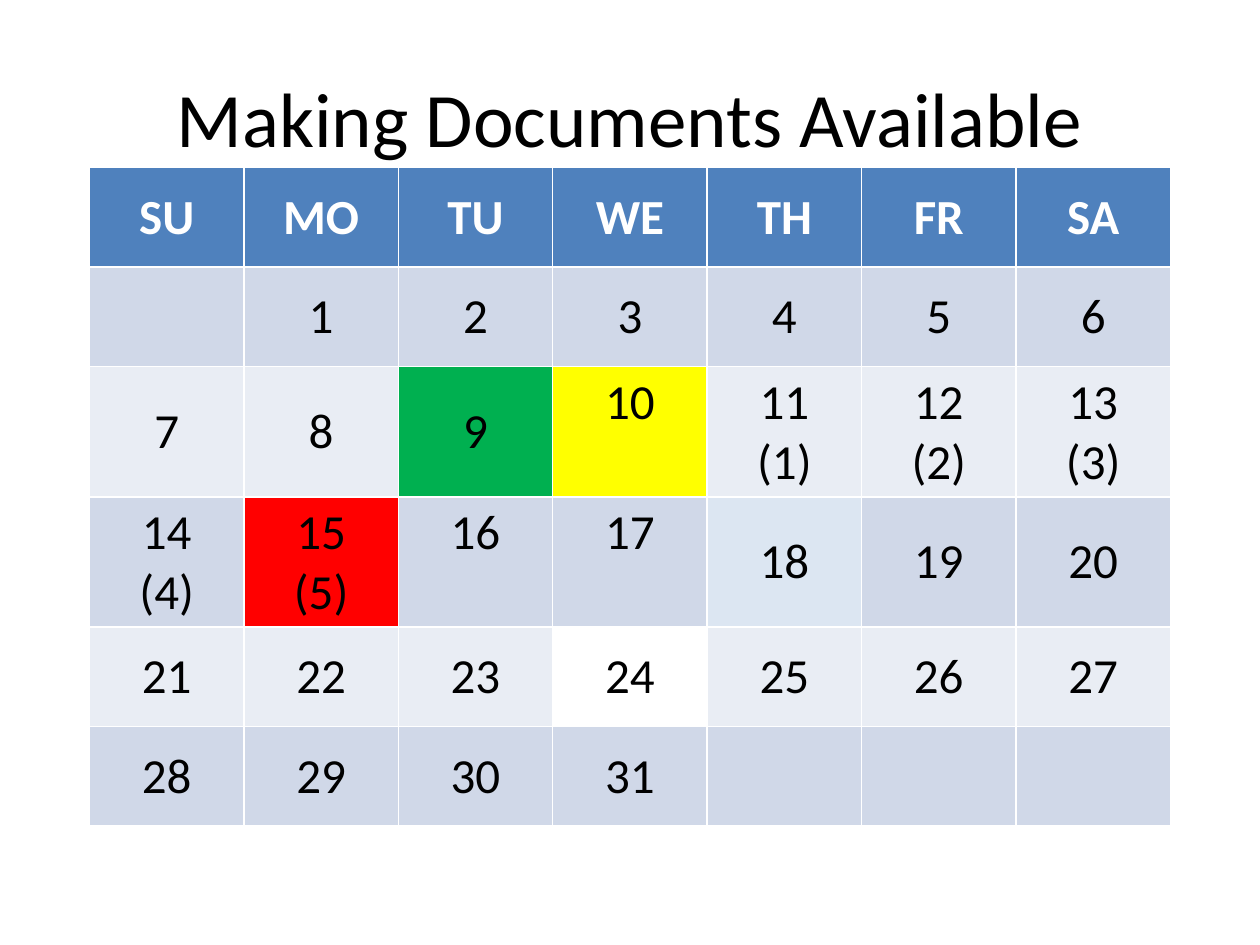
from pptx import Presentation
from pptx.dml.color import RGBColor
from pptx.enum.text import MSO_ANCHOR, PP_ALIGN
from pptx.util import Inches, Pt

FONT = "Calibri"
BLACK = RGBColor(0x00, 0x00, 0x00)
WHITE = RGBColor(0xFF, 0xFF, 0xFF)
HEADER = RGBColor(0x4F, 0x81, 0xBD)
BANDS = [RGBColor(0xE9, 0xED, 0xF4), RGBColor(0xD0, 0xD8, 0xE8)]
GREEN = RGBColor(0x00, 0xB0, 0x50)
YELLOW = RGBColor(0xFF, 0xFF, 0x00)
RED = RGBColor(0xFF, 0x00, 0x00)
PALE_BLUE = RGBColor(0xDC, 0xE6, 0xF2)

WEEKDAYS = ["SU", "MO", "TU", "WE", "TH", "FR", "SA"]
WEEKS = 5
FIRST_COLUMN = 1
LAST_DAY = 31
DAY_FILLS = {9: GREEN, 10: YELLOW, 15: RED, 18: PALE_BLUE, 24: None}
COUNTED_DAYS = {day: f"({day - 10})" for day in range(11, 16)}
TOP_DAYS = {10, 16, 17}


def add_text(tf, lines, size, color, bold=False):
    """Write one centred paragraph per line."""
    for i, line in enumerate(lines):
        p = tf.paragraphs[0] if i == 0 else tf.add_paragraph()
        p.alignment = PP_ALIGN.CENTER
        r = p.add_run()
        r.text = line
        r.font.name = FONT
        r.font.size = Pt(size)
        r.font.bold = bold
        r.font.color.rgb = color


def add_title(s, text):
    tf = s.shapes.add_textbox(Inches(0.5), Inches(0.3), Inches(9), Inches(1.25)).text_frame
    tf.word_wrap = True
    tf.vertical_anchor = MSO_ANCHOR.MIDDLE
    add_text(tf, [text], 44, BLACK)


def fill_cell(cell, lines, fill, color=BLACK, bold=False, anchor=MSO_ANCHOR.MIDDLE):
    if fill is None:
        cell.fill.background()
    else:
        cell.fill.solid()
        cell.fill.fore_color.rgb = fill
    cell.vertical_anchor = anchor
    add_text(cell.text_frame, lines, 28, color, bold)


def add_calendar(s):
    columns = len(WEEKDAYS)
    frame = s.shapes.add_table(WEEKS + 1, columns, Inches(0.71), Inches(1.33),
                               Inches(8.58), Inches(5.21))
    table = frame.table
    for row in table.rows:
        row.height = Inches(0.79)
    frame.height = Inches(5.21)

    for col, name in enumerate(WEEKDAYS):
        fill_cell(table.cell(0, col), [name], HEADER, WHITE, bold=True)

    for slot in range(WEEKS * columns):
        week, col = divmod(slot, columns)
        row = week + 1
        day = slot - FIRST_COLUMN + 1
        lines = [str(day)] if 1 <= day <= LAST_DAY else []
        if day in COUNTED_DAYS:
            lines.append(COUNTED_DAYS[day])
        anchor = MSO_ANCHOR.TOP if day in TOP_DAYS else MSO_ANCHOR.MIDDLE
        fill = DAY_FILLS.get(day, BANDS[row % 2])
        fill_cell(table.cell(row, col), lines, fill, anchor=anchor)


def main():
    prs = Presentation()
    prs.slide_width = Inches(10)
    prs.slide_height = Inches(7.5)
    s = prs.slides.add_slide(prs.slide_layouts[6])
    add_title(s, "Making Documents Available")
    add_calendar(s)
    prs.save("out.pptx")


if __name__ == "__main__":
    main()
